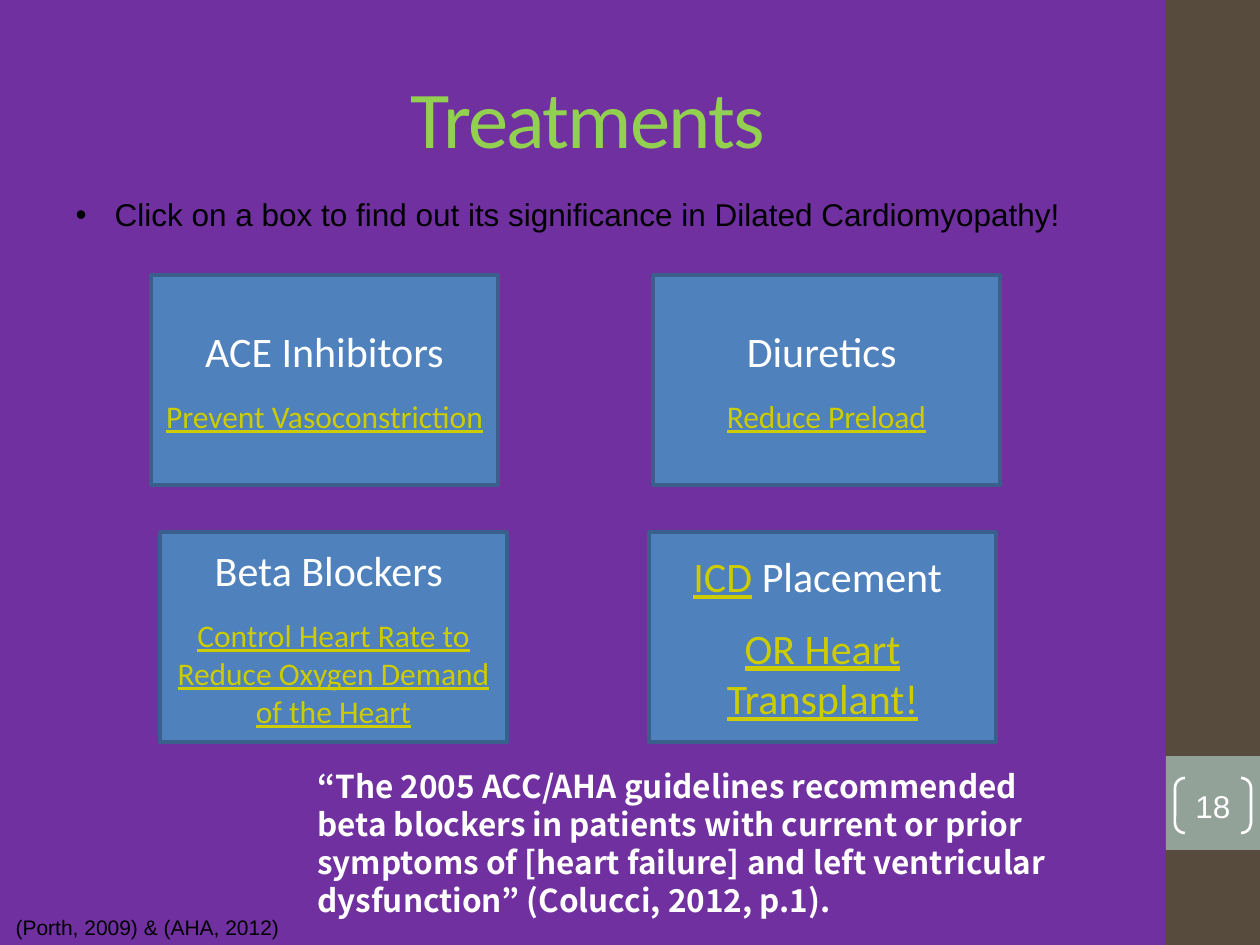
from pptx import Presentation
from pptx.dml.color import RGBColor
from pptx.enum.shapes import MSO_SHAPE
from pptx.enum.text import MSO_ANCHOR, PP_ALIGN
from pptx.util import Pt

RECT, BRACKETS = MSO_SHAPE.RECTANGLE, MSO_SHAPE.DOUBLE_BRACKET
LEFT, CENTER = PP_ALIGN.LEFT, PP_ALIGN.CENTER
TOP, MIDDLE = MSO_ANCHOR.TOP, MSO_ANCHOR.MIDDLE
PX = 914400 / 126

# Formats
WHITE, BLACK, YELLOW = "FFFFFF", "000000", "CCCC00"
HEADING = dict(name="Calibri", size=24, color=WHITE)
BIG_LINK = dict(HEADING, color=YELLOW, underline=True)
LINK = dict(BIG_LINK, size=18)
TITLE = dict(name="Calibri", size=46, color="92D050")
BODY = dict(name="Arial", size=18, color=BLACK)
CITATION = dict(BODY, size=12)
NUMBER = dict(BODY, color=WHITE)
QUOTE = dict(name="Noto Sans CJK KR", size=18, color=WHITE, bold=True)

# Content: each paragraph is a list of (text, format) runs
title_text = [[("Treatments", TITLE)]]
prompt_text = [[("Click on a box to find out its significance in "
                 "Dilated Cardiomyopathy!", BODY)]]
BOX_SIZE = (347, 210)
treatments = [
    ((151, 275), [[("ACE Inhibitors", HEADING)],
                  [("Prevent Vasoconstriction", LINK)]]),
    ((653, 275), [[("Diuretics ", HEADING)], [("Reduce Preload", LINK)]]),
    ((160, 532), [[("Beta Blockers ", HEADING)],
                  [("Control Heart Rate to Reduce Oxygen Demand of the Heart", LINK)]]),
    ((649, 532), [[("ICD", BIG_LINK), (" Placement ", HEADING)],
                  [("OR Heart Transplant!", BIG_LINK)]]),
]
side_bands = [((1166, 0, 94, 945), "564B3C"), ((1166, 756, 94, 94), "93A299")]
notes = [
    ((-39, 908, 373, 38), [[("(Porth, 2009) & (AHA, 2012)", CITATION)]], CENTER),
    ((305, 761, 756, 165),
     [[("“The 2005 ACC/AHA guidelines recommended beta blockers in patients "
        "with current or prior symptoms of [heart failure] and left ventricular "
        "dysfunction” (Colucci, 2012, p.1).", QUOTE)]], LEFT),
]


def emu(*lengths):
    return [round(length * PX) for length in lengths]


def rgb(color):
    return RGBColor.from_string(color)


def write(shape, paragraphs, align=CENTER, anchor=MIDDLE, gap=0):
    frame = shape.text_frame
    frame.word_wrap = True
    frame.vertical_anchor = anchor
    for index, runs in enumerate(paragraphs):
        paragraph = frame.add_paragraph() if index else frame.paragraphs[0]
        paragraph.alignment = align
        paragraph.space_before = Pt(gap if index else 0)
        for text, style in runs:
            run = paragraph.add_run()
            run.text = text
            for key, value in style.items():
                if key == "color":
                    run.font.color.rgb = rgb(value)
                else:
                    setattr(run.font, key, Pt(value) if key == "size" else value)


def add_box(kind, box, fill=None, line=None, width=0):
    shape = slide.shapes.add_shape(kind, *emu(*box))
    shape.shadow.inherit = False
    if fill:
        shape.fill.solid()
        shape.fill.fore_color.rgb = rgb(fill)
    else:
        shape.fill.background()
    if line:
        shape.line.color.rgb = rgb(line)
        shape.line.width = Pt(width)
    else:
        shape.line.fill.background()
    return shape


def place(shape, box):
    shape.left, shape.top, shape.width, shape.height = emu(*box)


prs = Presentation()
prs.slide_width, prs.slide_height = emu(1260, 945)
slide = prs.slides.add_slide(prs.slide_layouts[1])
slide.background.fill.solid()
slide.background.fill.fore_color.rgb = rgb("7030A0")

# Side bands and slide number
for box, color in side_bands:
    add_box(RECT, box, color)
number = add_box(BRACKETS, (1175, 778, 76, 55), line=WHITE, width=1.5)
number.adjustments[0] = 0.18
for side in ("left", "top", "right", "bottom"):
    setattr(number.text_frame, f"margin_{side}", 0)
write(number, [[("18", NUMBER)]])

# Title
title = slide.shapes.title
place(title, (63, 38, 1050, 157))
write(title, title_text)
title.text_frame.paragraphs[0].runs[0]._r.get_or_add_rPr().set("spc", "-100")

# Bulleted prompt
prompt = slide.placeholders[1]
place(prompt, (63, 189, 1061, 50))
write(prompt, prompt_text, LEFT, TOP)
bullet_indent = prompt.text_frame.paragraphs[0]._p.get_or_add_pPr()
hang = emu(39)[0]
bullet_indent.set("marL", str(hang))
bullet_indent.set("indent", str(-hang))

# Treatment boxes
for corner, paragraphs in treatments:
    box = add_box(RECT, corner + BOX_SIZE, "4F81BD", "3A5F8C", 2)
    write(box, paragraphs, gap=12)

# Citation and quotation
for box, paragraphs, align in notes:
    write(slide.shapes.add_textbox(*emu(*box)), paragraphs, align, TOP)

prs.save("out.pptx")
